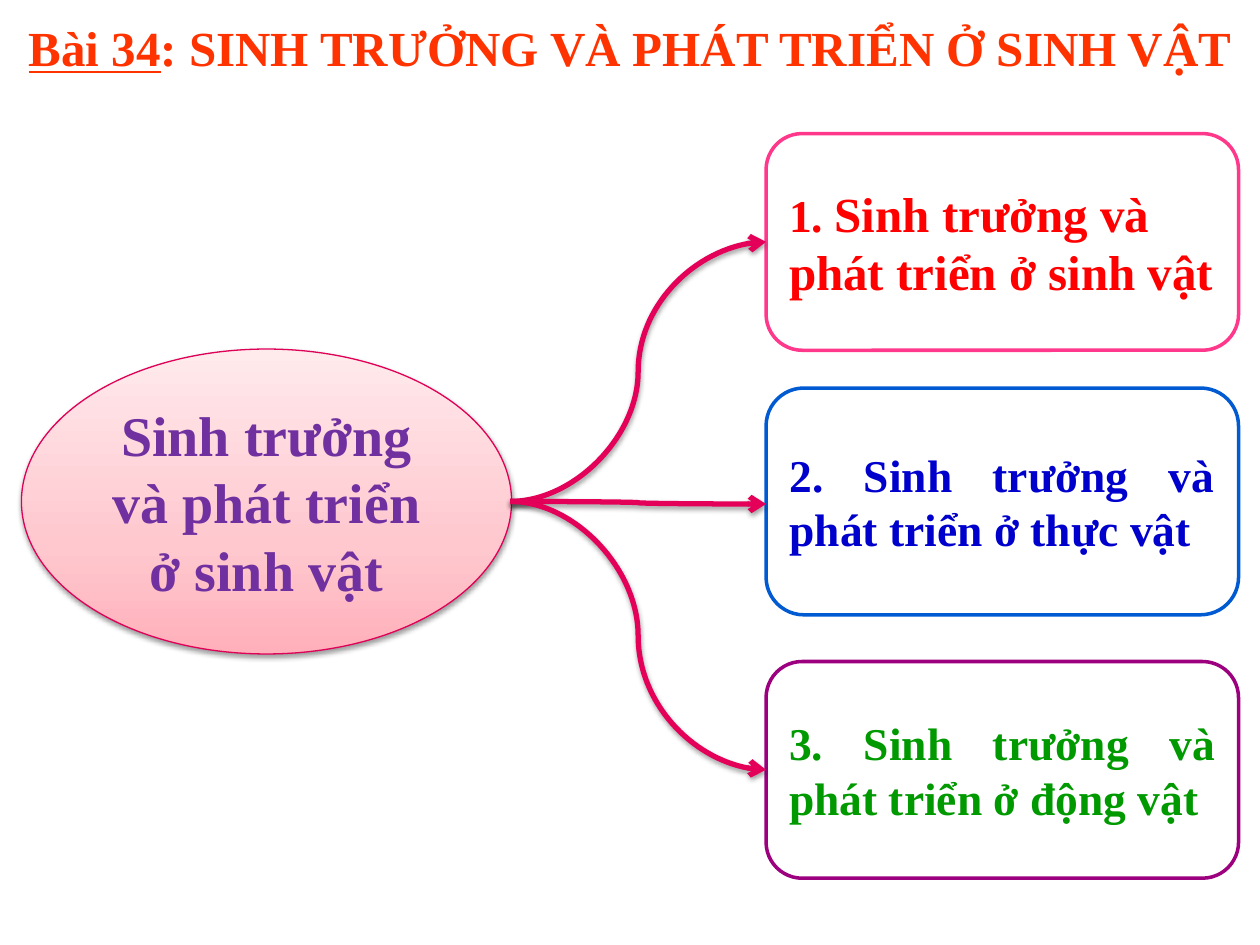
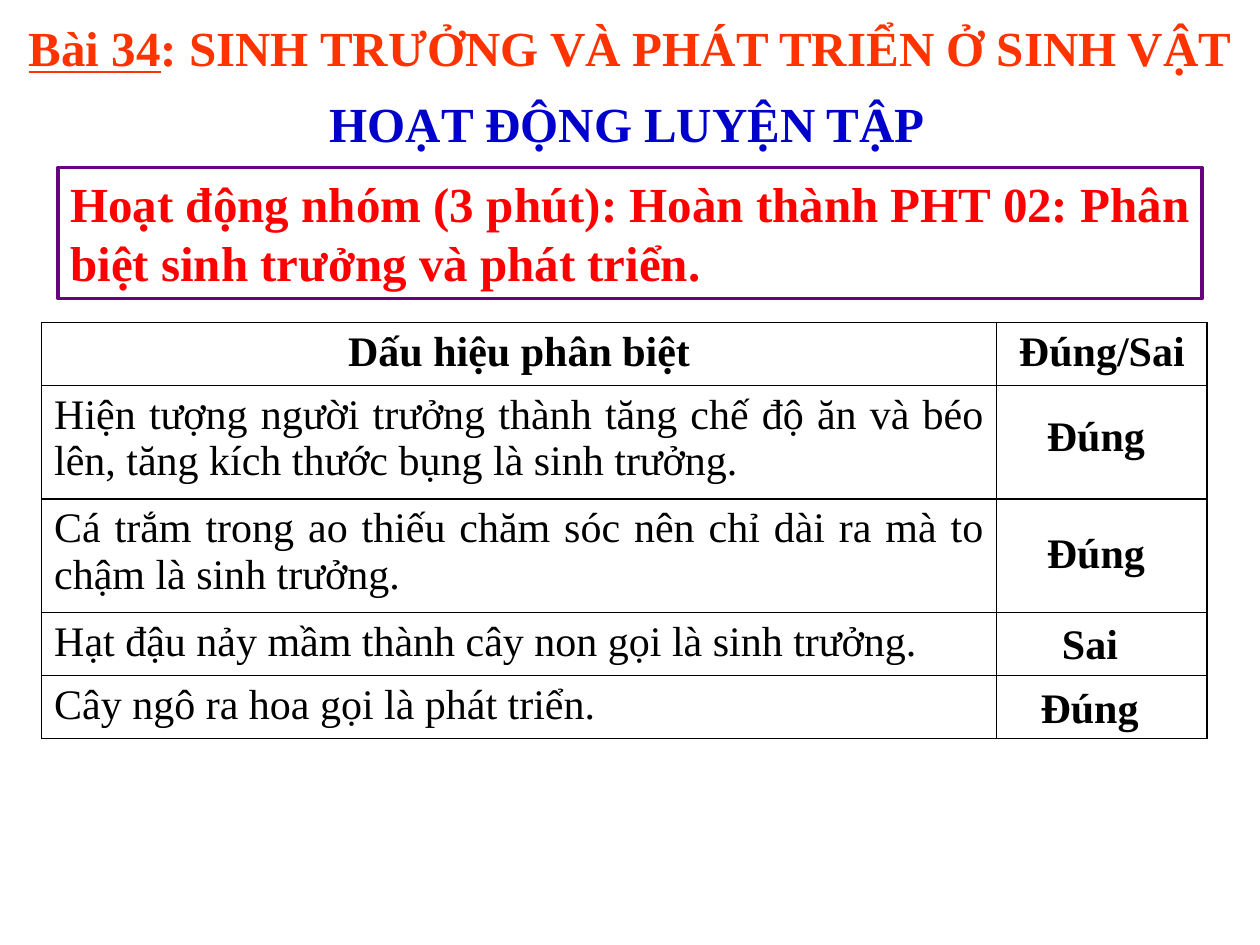
"""Builds two lesson slides: a topic map and a group exercise."""
from copy import deepcopy
from dataclasses import dataclass

from lxml.etree import SubElement
from pptx import Presentation
from pptx.dml.color import RGBColor
from pptx.enum.shapes import MSO_CONNECTOR, MSO_SHAPE
from pptx.enum.text import MSO_ANCHOR, MSO_AUTO_SIZE, PP_ALIGN
from pptx.oxml.ns import qn
from pptx.util import Inches, Pt

FONT = "Times New Roman"
BLACK, WHITE, RED, BLUE = "000000", "FFFFFF", "FF0000", "0000CC"
ORANGE, GREEN, VIOLET, CRIMSON = "FF3300", "009900", "7030A0", "E40059"
HUB_LINE = "DF0057"
HUB_GRADIENT = [(0, "FFB0BA"), (0.35, "FFC7CE"), (1, "FFEAEC")]
TITLE_ONLY = 5
TOPIC_LEFT, TOPIC_WIDTH = 6.08, 3.75
HUB_TIP = (4.05, 3.98)


@dataclass
class Span:
    text: str
    size: float
    color: str
    bold: bool = True
    underline: bool = False


@dataclass
class Topic:
    top: float
    height: float
    outline: str
    arrow_end: float
    align: PP_ALIGN
    spans: list[Span]


@dataclass
class Answer:
    text: str
    left: float
    top: float


TITLE = [Span("Bài 34", 28, ORANGE, underline=True),
         Span(": SINH TRƯỞNG VÀ PHÁT TRIỂN Ở SINH VẬT", 28, ORANGE)]
TOPICS = [
    Topic(1.06, 1.72, "FF388C", 1.92, PP_ALIGN.LEFT,
          [Span("1. ", 26, RED), Span("Sinh trưởng và phát triển ở sinh vật", 28, RED)]),
    Topic(3.08, 1.8, "005BD3", 4, PP_ALIGN.JUSTIFY,
          [Span("2. Sinh trưởng và phát triển ở thực vật", 26, BLUE)]),
    Topic(5.25, 1.72, "9C007F", 6.11, PP_ALIGN.JUSTIFY,
          [Span("3. Sinh trưởng và phát triển ở động vật", 26, GREEN)]),
]
HEADINGS = ["Dấu hiệu phân biệt", "Đúng/Sai"]
STATEMENTS = [
    "Hiện tượng người trưởng thành tăng chế độ ăn và béo lên, tăng kích thước bụng là sinh trưởng.",
    "Cá trắm trong ao thiếu chăm sóc nên chỉ dài ra mà to chậm là sinh trưởng.",
    "Hạt đậu nảy mầm thành cây non gọi là sinh trưởng.",
    "Cây ngô ra hoa gọi là phát triển.",
]
COLUMN_WIDTHS = [7.58, 1.67]
ROW_HEIGHTS = [0.5, 0.9, 0.9, 0.5, 0.5]
ANSWERS = [Answer("Đúng", 8.21, 3.2), Answer("Đúng", 8.21, 4.13),
           Answer("Sai", 8.33, 4.85), Answer("Đúng", 8.16, 5.36)]


def rgb(color: str) -> RGBColor:
    """Turn a hex string into a colour."""
    return RGBColor.from_string(color)


def inches(*lengths: float) -> list:
    """Convert several lengths at once."""
    return [Inches(length) for length in lengths]


def write(frame, spans: list[Span], align=PP_ALIGN.LEFT, **frame_format) -> None:
    """Fill a text frame with one formatted paragraph."""
    for name, value in frame_format.items():
        setattr(frame, name, value)
    para = frame.paragraphs[0]
    para.alignment = align
    for span in spans:
        run = para.add_run()
        run.text = span.text
        font_format = {"name": FONT, "size": Pt(span.size),
                       "bold": span.bold, "underline": span.underline}
        for name, value in font_format.items():
            setattr(run.font, name, value)
        run.font.color.rgb = rgb(span.color)


def add_soft_shadow(shape) -> None:
    """Give a shape or connector a soft shadow below it."""
    effects = SubElement(shape._element.spPr, qn("a:effectLst"))
    shadow = SubElement(effects, qn("a:outerShdw"), blurRad=str(Pt(3.1)),
                        dist=str(Pt(1.6)), dir="5400000", rotWithShape="0")
    color = SubElement(shadow, qn("a:srgbClr"), val=BLACK)
    SubElement(color, qn("a:alpha"), val="38000")


def set_line(shape, color: str, width: float) -> None:
    """Set the outline colour and width."""
    shape.line.color.rgb = rgb(color)
    shape.line.width = Pt(width)


def add_panel(page, kind, place: tuple, outline: str, width: float = 2):
    """Draw a white outlined shape without a shadow."""
    panel = page.shapes.add_shape(kind, *inches(*place))
    panel.fill.solid()
    panel.fill.fore_color.rgb = rgb(WHITE)
    set_line(panel, outline, width)
    panel.shadow.inherit = False
    return panel


def add_label(page, place: tuple, span: Span, wrap: bool) -> None:
    """Place a text box holding one span."""
    box = page.shapes.add_textbox(*inches(*place))
    write(box.text_frame, [span], word_wrap=wrap,
          auto_size=MSO_AUTO_SIZE.SHAPE_TO_FIT_TEXT,
          vertical_anchor=MSO_ANCHOR.MIDDLE if wrap else MSO_ANCHOR.TOP)


def add_page(deck):
    """Add a slide with the shared lesson title."""
    page = deck.slides.add_slide(deck.slide_layouts[TITLE_ONLY])
    title = page.shapes.title
    title.left, title.top, title.width, title.height = inches(0, 0.09, 10, 0.57)
    write(title.text_frame, TITLE, PP_ALIGN.CENTER, word_wrap=True,
          auto_size=MSO_AUTO_SIZE.NONE, vertical_anchor=MSO_ANCHOR.TOP)
    return page


def add_hub(page) -> None:
    """Draw the gradient ellipse with the main subject."""
    hub = page.shapes.add_shape(MSO_SHAPE.OVAL, *inches(0.17, 2.77, 3.89, 2.42))
    hub.fill.gradient()
    hub.fill.gradient_angle = 90
    stop_list = hub._element.spPr.find(qn("a:gradFill")).find(qn("a:gsLst"))
    stop_list.append(deepcopy(stop_list[0]))
    for stop, (position, color) in zip(hub.fill.gradient_stops, HUB_GRADIENT):
        stop.position = position
        stop.color.rgb = rgb(color)
    set_line(hub, HUB_LINE, 0.75)
    add_soft_shadow(hub)
    write(hub.text_frame, [Span("Sinh trưởng và phát triển ở sinh vật", 32, VIOLET)],
          PP_ALIGN.CENTER, word_wrap=True, vertical_anchor=MSO_ANCHOR.MIDDLE)


def add_topic(page, topic: Topic) -> None:
    """Draw a topic box and the curved arrow leading to it."""
    place = (TOPIC_LEFT, topic.top, TOPIC_WIDTH, topic.height)
    panel = add_panel(page, MSO_SHAPE.ROUNDED_RECTANGLE, place, topic.outline)
    write(panel.text_frame, topic.spans, topic.align, word_wrap=True,
          vertical_anchor=MSO_ANCHOR.MIDDLE)
    arrow = page.shapes.add_connector(
        MSO_CONNECTOR.CURVE, *inches(*HUB_TIP, TOPIC_LEFT, topic.arrow_end))
    set_line(arrow, CRIMSON, 3)
    SubElement(arrow.line._get_or_add_ln(), qn("a:tailEnd"), type="arrow")
    add_soft_shadow(arrow)


def format_cell(cell, span: Span, align: PP_ALIGN) -> None:
    """Give a cell black borders, no fill and its text."""
    properties = cell._tc.get_or_add_tcPr()
    for side in ("lnL", "lnR", "lnT", "lnB"):
        border = SubElement(properties, qn(f"a:{side}"), w=str(Pt(1)))
        SubElement(SubElement(border, qn("a:solidFill")), qn("a:srgbClr"), val=BLACK)
    cell.fill.background()
    write(cell.text_frame, [span], align)


def add_statement_table(page) -> None:
    """Draw the table of statements to judge."""
    rows = [HEADINGS] + [[statement, ""] for statement in STATEMENTS]
    table = page.shapes.add_table(
        len(rows), len(HEADINGS),
        *inches(0.33, 2.56, sum(COLUMN_WIDTHS), sum(ROW_HEIGHTS))).table
    table.first_row = table.horz_banding = False
    for column, width in zip(table.columns, COLUMN_WIDTHS):
        column.width = Inches(width)
    for row_index, texts in enumerate(rows):
        table.rows[row_index].height = Inches(ROW_HEIGHTS[row_index])
        heading = row_index == 0
        align = PP_ALIGN.CENTER if heading else PP_ALIGN.JUSTIFY
        for column_index, text in enumerate(texts):
            format_cell(table.cell(row_index, column_index),
                        Span(text, 24, BLACK, bold=heading), align)


def build_topic_map(deck) -> None:
    """Build the slide with the hub and its three topics."""
    page = add_page(deck)
    add_hub(page)
    for topic in TOPICS:
        add_topic(page, topic)


def build_exercise(deck) -> None:
    """Build the slide with the task, the table and its answers."""
    page = add_page(deck)
    task = add_panel(page, MSO_SHAPE.RECTANGLE, (0.46, 1.33, 9.08, 1.04), "68007F")
    write(task.text_frame,
          [Span("Hoạt động nhóm (3 phút): Hoàn thành PHT 02: "
                "Phân biệt sinh trưởng và phát triển.", 28, RED)],
          PP_ALIGN.JUSTIFY, word_wrap=True, vertical_anchor=MSO_ANCHOR.TOP,
          auto_size=MSO_AUTO_SIZE.SHAPE_TO_FIT_TEXT)
    add_statement_table(page)
    for answer in ANSWERS:
        width = 0.65 if answer.text == "Sai" else 0.99
        add_label(page, (answer.left, answer.top, width, 0.5),
                  Span(answer.text, 24, BLACK), wrap=False)
    add_label(page, (2.52, 0.69, 4.96, 0.57),
              Span("HOẠT ĐỘNG LUYỆN TẬP", 28, BLUE), wrap=True)


def main() -> None:
    """Build and save the deck."""
    deck = Presentation()
    deck.slide_width, deck.slide_height = inches(10, 7.5)
    build_topic_map(deck)
    build_exercise(deck)
    deck.save("out.pptx")


if __name__ == "__main__":
    main()
